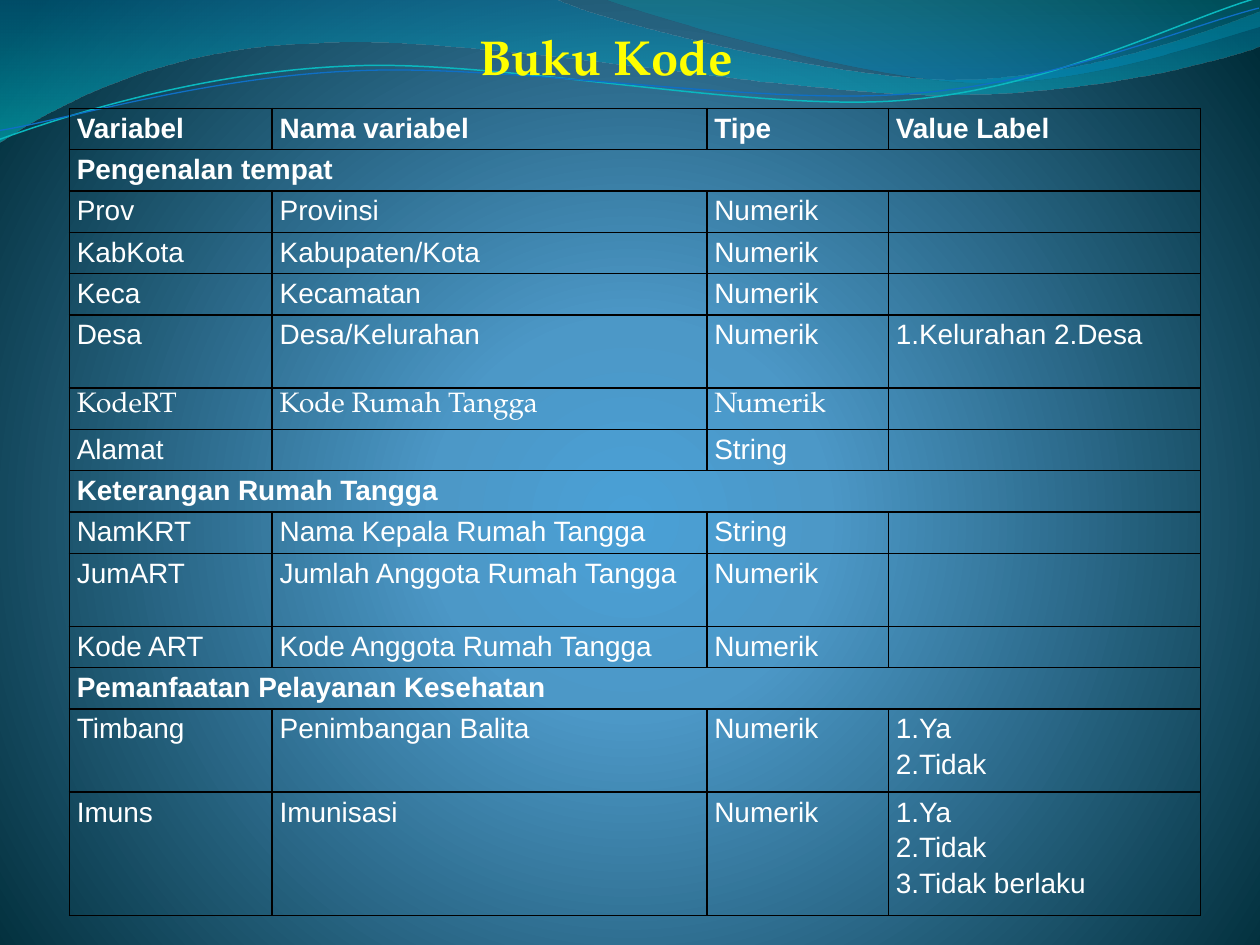
from lxml.etree import SubElement
from pptx import Presentation
from pptx.dml.color import RGBColor as Rgb
from pptx.enum.text import MSO_ANCHOR as Anchor, MSO_AUTO_SIZE as Auto, PP_ALIGN as Align
from pptx.oxml.ns import qn
from pptx.util import Inches, Pt

WHITE = Rgb(0xFF, 0xFF, 0xFF)
BLACK = Rgb(0x00, 0x00, 0x00)
YELLOW = Rgb(0xFF, 0xFF, 0x00)
SKY = Rgb(0x4A, 0xA0, 0xD6)
STEEL = Rgb(0x4C, 0x98, 0xC7)
NIGHT = Rgb(0x00, 0x2C, 0x38)
OCEAN = Rgb(0x00, 0x74, 0xA1)
TEAL = Rgb(0x00, 0xC6, 0xCF)
GREEN = Rgb(0x00, 0xA1, 0xA9)
AZURE = Rgb(0x00, 0x8B, 0xBF)
CYAN = Rgb(0x0A, 0xB8, 0xBF)
BLUE = Rgb(0x0F, 0x6F, 0xC6)

COLS = [1.61, 3.45, 1.44, 2.48]
HIGH = 6.41
TALL = {"Desa": 0.58, "JumART": 0.58, "Timbang": 0.66, "Imuns": 0.98}
ROWS = [
    ("Variabel", "Nama variabel", "Tipe", "Value Label"),
    ("Pengenalan tempat",),
    ("Prov", "Provinsi", "Numerik", ""),
    ("KabKota", "Kabupaten/Kota", "Numerik", ""),
    ("Keca", "Kecamatan", "Numerik", ""),
    ("Desa", "Desa/Kelurahan", "Numerik", "1.Kelurahan 2.Desa"),
    ("KodeRT", "Kode Rumah Tangga", "Numerik", ""),
    ("Alamat", "", "String", ""),
    ("Keterangan Rumah Tangga",),
    ("NamKRT", "Nama Kepala Rumah Tangga", "String", ""),
    ("JumART", "Jumlah Anggota Rumah Tangga", "Numerik", ""),
    ("Kode ART", "Kode Anggota Rumah Tangga", "Numerik", ""),
    ("Pemanfaatan Pelayanan Kesehatan",),
    ("Timbang", "Penimbangan Balita", "Numerik", "1.Ya\n2.Tidak"),
    ("Imuns", "Imunisasi", "Numerik", "1.Ya\n2.Tidak\n3.Tidak berlaku"),
]

WAVE = [(4.4, -0.01),
        (4.76, 0.17, 6.64, 0.63, 7.58, 0.63), (8.53, 0.63, 9.58, 0.26, 10, 0.09),
        (10.01, 0.36),
        (9.83, 0.44, 8.7, 0.76, 7.46, 0.75), (6.22, 0.75, 3.82, 0.28, 2.57, 0.34),
        (1.29, 0.36, 0.46, 0.83, -0.01, 1.13)]
CREST = [(5.09, 0.11, 6.82, 0.62, 7.69, 0.65), (8.56, 0.69, 9.61, 0.32, 10, 0.21),
         (10, 0)]
UPPER = [(0.47, 0.72, 1.58, 0.41, 2.78, 0.42), (3.96, 0.42, 5.91, 0.93, 7.12, 0.9),
         (8.32, 0.87, 9.4, 0.36, 10, 0.22)]
LOWER = [(0.46, 0.75, 1.64, 0.45, 2.83, 0.46), (4.03, 0.46, 5.96, 0.88, 7.16, 0.85),
         (8.35, 0.83, 9.42, 0.42, 10.01, 0.3)]


def write(frame, text, font="Arial", size=16, color=WHITE, bold=False,
          align=Align.LEFT, space=1.15):
    """Fill a text frame, one paragraph a line."""
    for i, line in enumerate(text.split("\n")):
        para = frame.add_paragraph() if i else frame.paragraphs[0]
        para.alignment, para.line_spacing = align, space
        if line:
            run = para.add_run()
            run.text = line
            run.font.name, run.font.size = font, Pt(size)
            run.font.bold, run.font.color.rgb = bold, color


def blend(fill, root, stops):
    """Give a fill its gradient stops and return the gradient element."""
    fill.gradient()
    grad = root.find(".//" + qn("a:gradFill"))
    grad.clear()
    bag = SubElement(grad, qn("a:gsLst"))
    for pos, color, alpha in stops:
        stop = SubElement(bag, qn("a:gs"), pos=str(pos * 1000))
        tint = SubElement(stop, qn("a:srgbClr"), val=str(color))
        if alpha < 100:
            SubElement(tint, qn("a:alpha"), val=str(alpha * 1000))
    return grad


class Deck:
    """Holds the style and the current slide."""

    serif = "TeX Gyre Pagella"

    def __init__(self):
        """Open a new deck with one title-only slide."""
        self.show = Presentation()
        self.show.slide_width, self.show.slide_height = Inches(10), Inches(7.5)
        self.slide = self.show.slides.add_slide(self.show.slide_layouts[5])

    def back(self, *stops):
        """Paint the round background gradient."""
        grad = blend(self.slide.background.fill, self.slide._element, stops)
        way = SubElement(grad, qn("a:path"), path="circle")
        SubElement(way, qn("a:fillToRect"), l="10000", t="110000", r="10000", b="100000")

    def outline(self, start, steps, close):
        """Draw an outline of lines and cubic curves."""
        spots = [step[i:i + 2] for step in steps for i in range(0, len(step), 2)]
        pen = self.slide.shapes.build_freeform(*map(Inches, start))
        pen.add_line_segments([(Inches(x), Inches(y)) for x, y in spots], close=close)
        shape = pen.convert_to_shape()
        shape.shadow.inherit = False
        lines = iter(shape._element.findall(".//" + qn("a:lnTo")))
        for step in steps:
            line = next(lines)
            if len(step) == 6:
                line.tag = qn("a:cubicBezTo")
                for _ in range(2):
                    spare = next(lines)
                    line.append(spare[0])
                    spare.getparent().remove(spare)
        return shape

    def band(self, start, steps, *stops):
        """Draw a closed band with a vertical gradient."""
        shape = self.outline(start, steps, True)
        shape.line.fill.background()
        grad = blend(shape.fill, shape._element, stops)
        SubElement(grad, qn("a:lin"), ang="5400000", scaled="0")

    def curve(self, start, steps, color, width):
        """Draw an open, slightly turned line."""
        shape = self.outline(start, steps, False)
        shape.rotation = 357.3
        shape.fill.background()
        shape.line.color.rgb, shape.line.width = color, Pt(width)

    def title(self, text, left, top, width, height):
        """Place the title in front of the bands."""
        box = self.slide.shapes.title
        box.left, box.top = Inches(left), Inches(top)
        box.width, box.height = Inches(width), Inches(height)
        frame = box.text_frame
        frame.word_wrap, frame.auto_size = True, Auto.SHAPE_TO_FIT_TEXT
        frame.vertical_anchor = Anchor.TOP
        write(frame, text, font=self.serif, size=28, color=YELLOW, bold=True,
              align=Align.CENTER, space=1.0)
        self.slide.shapes._spTree.append(box._element)

    def cell(self, cell, text, **form):
        """Format one table cell with black borders."""
        cell.margin_left = cell.margin_right = Inches(0.06)
        cell.margin_top = cell.margin_bottom = 0
        props = cell._tc.get_or_add_tcPr()
        for side in "LRTB":
            edge = SubElement(props, qn("a:ln" + side), w=str(Pt(1)))
            ink = SubElement(edge, qn("a:solidFill"))
            SubElement(ink, qn("a:srgbClr"), val=str(BLACK))
        cell.fill.background()
        write(cell.text_frame, text, **form)

    def table(self, left, top, cols, rows):
        """Add the table; a row with one text spans all columns."""
        low = (HIGH - sum(TALL.values())) / (len(rows) - len(TALL))
        grid = self.slide.shapes.add_table(len(rows), len(cols), Inches(left), Inches(top),
                                           Inches(sum(cols)), Inches(HIGH)).table
        grid.first_row = grid.horz_banding = False
        for col, width in zip(grid.columns, cols):
            col.width = Inches(width)
        for r, texts in enumerate(rows):
            name = texts[0]
            grid.rows[r].height = Inches(TALL.get(name, low))
            span = len(texts) == 1
            font = self.serif if name == "KodeRT" else "Arial"
            for c in range(len(cols)):
                align = Align.JUSTIFY if (name, c) == ("Timbang", 3) else Align.LEFT
                self.cell(grid.cell(r, c), texts[c] if c < len(texts) else "",
                          font=font, bold=span or r == 0, align=align)
            if span:
                grid.cell(r, 0).merge(grid.cell(r, len(cols) - 1))


def main():
    """Build the code book slide."""
    deck = Deck()
    deck.back((0, SKY, 100), (25, STEEL, 100), (100, NIGHT, 100))
    deck.band((0, 0), WAVE, (0, OCEAN, 45), (100, TEAL, 55))
    deck.band((4.79, -0.01), CREST, (0, GREEN, 30), (80, AZURE, 45))
    deck.curve((-0.02, 0.87), UPPER, CYAN, 0.85)
    deck.curve((-0.02, 0.8), LOWER, BLUE, 0.75)
    deck.table(0.55, 0.86, COLS, ROWS)
    deck.title("Buku Kode", 1.88, 0.16, 5.86, 0.57)
    deck.show.save("out.pptx")


if __name__ == "__main__":
    main()
